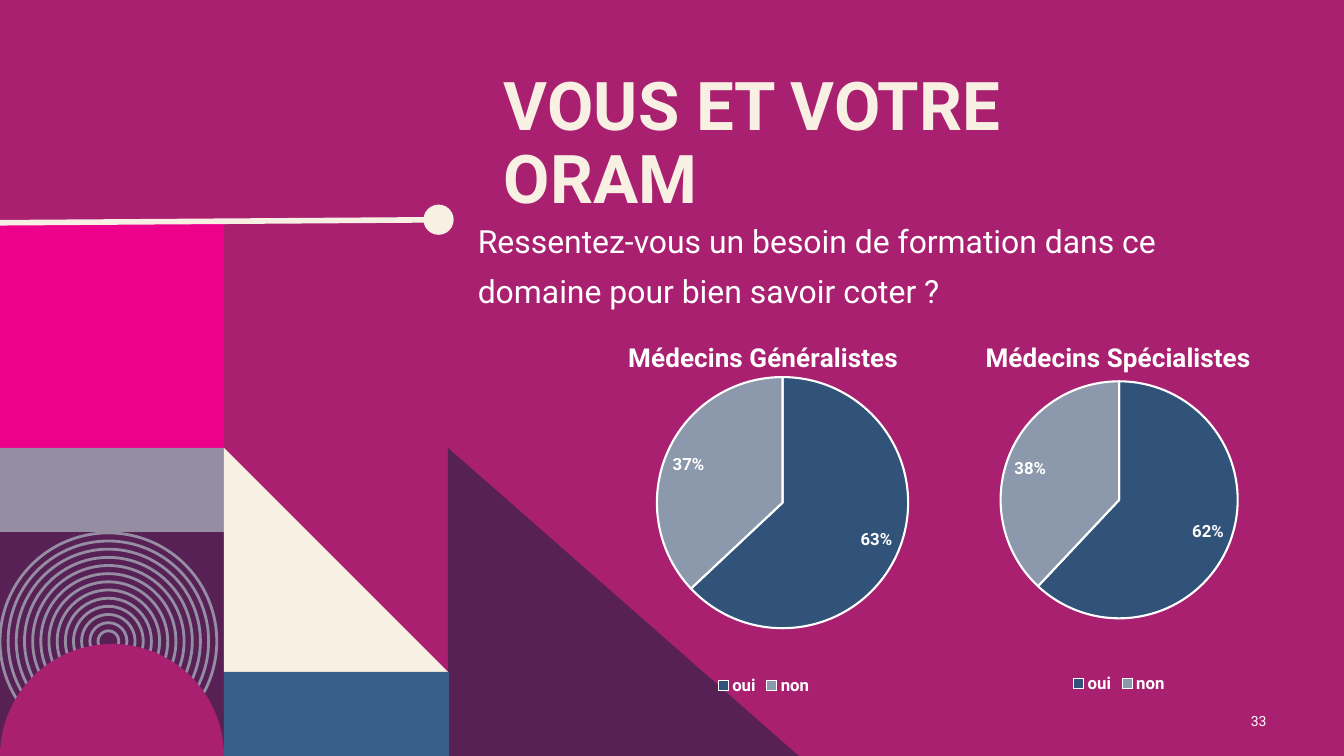
import math

from lxml import etree
from pptx import Presentation
from pptx import util as u
from pptx.chart.data import CategoryChartData
from pptx.dml.color import RGBColor
from pptx.enum import chart as ch, shapes, text
from pptx.oxml import parse_xml
from pptx.oxml.ns import nsdecls, qn

W, H = 13.33, 7.5
FONT = "Roboto"
MAGENTA, PLUM, PINK, GREY = "AA2070", "582156", "EC008C", "958EA2"
CREAM, BLUE, WHITE = "F8F0E3", "385E88", "FFFFFF"
SLICES = "325379", "8C99AD"
SHAPE = shapes.MSO_SHAPE


def color(value):
    return RGBColor.from_string(value)


def paint(sp, fill=None, line=None, width=2):
    sp.shadow.inherit = False
    if fill:
        sp.fill.solid()
        sp.fill.fore_color.rgb = color(fill)
    else:
        sp.fill.background()
    if line:
        sp.line.color.rgb = color(line)
        sp.line.width = u.Pt(width)
    else:
        sp.line.fill.background()
    return sp


def add_preset(s, kind, box, **style):
    return paint(s.shapes.add_shape(kind, *map(u.Inches, box)), **style)


def add_outline(s, points, fill):
    start, *rest = [(u.Inches(x), u.Inches(y)) for x, y in points]
    builder = s.shapes.build_freeform(*start)
    builder.add_line_segments(rest)
    return paint(builder.convert_to_shape(), fill)


def add_triangle(s, box, fill):
    x, y, w, h = box
    add_outline(s, [(x, y), (x + w, y + h), (x, y + h)], fill)


def add_arch(s, box, fill, steps=90):
    x, y, w, h = box
    angles = [math.pi * i / steps for i in range(steps + 1)]
    add_outline(s, [(x + w / 2 * (1 - math.cos(a)), y + h * (1 - math.sin(a)))
                    for a in angles], fill)


def add_rings(s, box, count=13, step=0.081):
    x, y, size, _ = box
    for i in range(count):
        d = size - 2 * i * step
        add_preset(s, SHAPE.OVAL, (x + i * step, y + i * step, d, d), line=GREY)


def add_mosaic(s, box):
    x, y, w, h = box
    tile = w / 2
    low, band = y + tile, 0.375 * tile
    add_preset(s, SHAPE.RECTANGLE, (x, y + h - tile, tile, tile), fill=PLUM)
    add_preset(s, SHAPE.RECTANGLE, (x, y, tile, tile), fill=PINK)
    add_preset(s, SHAPE.RECTANGLE, (x, low, tile, band), fill=GREY)
    add_triangle(s, (x + w, low, 3.48, y + h - low), PLUM)
    add_triangle(s, (x + tile, low, tile, tile), CREAM)
    add_rings(s, (x, low + band + 0.01, 2.15, 2.15))
    add_arch(s, (x, y + h - tile / 2, tile, tile / 2), MAGENTA)
    base = (x + tile, low + tile, tile + 0.01, y + h - low - tile)
    add_preset(s, SHAPE.RECTANGLE, base, fill=BLUE)


def add_pointer(s, box):
    x, y, w, h = box
    add_preset(s, SHAPE.OVAL, (x + w - h, y, h, h), fill=CREAM)
    ends = (x, y + 0.6 * h, x + w - h / 3, y + h / 2)
    line = s.shapes.add_connector(shapes.MSO_CONNECTOR.STRAIGHT, *map(u.Inches, ends))
    line.line.color.rgb = color(CREAM)
    line.line.width = u.Pt(4)
    etree.SubElement(line._element.spPr, qn("a:effectLst"))


def set_font(font, size, value, bold=False):
    font.name = FONT
    font.size = u.Pt(size)
    font.bold = bold
    font.color.rgb = color(value)


def add_text(s, box, words, size, value, bold=False, anchor="TOP", align="LEFT",
             spacing=1.0, after=0):
    tf = s.shapes.add_textbox(*map(u.Inches, box)).text_frame
    tf.word_wrap = True
    tf.vertical_anchor = text.MSO_ANCHOR[anchor]
    p = tf.paragraphs[0]
    p.text = words
    p.alignment = text.PP_ALIGN[align]
    p.line_spacing = spacing
    p.space_after = u.Pt(after)
    set_font(p.font, size, value, bold)


def set_layout(parent, position, index, target=""):
    for old in parent.findall(qn("c:layout")):
        parent.remove(old)
    modes = '<c:xMode val="edge"/><c:yMode val="edge"/>'
    values = "".join(f'<c:{k} val="{v}"/>' for k, v in zip("xywh", position))
    parent.insert(index, parse_xml(
        f'<c:layout {nsdecls("c")}><c:manualLayout>{target}{modes}{values}'
        "</c:manualLayout></c:layout>"))


def add_pie(s, box, title, values, plot, title_at):
    data = CategoryChartData()
    data.categories = ["oui", "non"]
    data.add_series("Series 1", values)
    chart = s.shapes.add_chart(ch.XL_CHART_TYPE.PIE, *map(u.Inches, box), data).chart
    set_font(chart.font, 10, "000000")

    chart.has_title = True
    p = chart.chart_title.text_frame.paragraphs[0]
    p.text = title
    set_font(p.font, 18.6, WHITE, True)

    chart.has_legend = True
    chart.legend.position = ch.XL_LEGEND_POSITION.BOTTOM
    chart.legend.include_in_layout = False
    set_font(chart.legend.font, 12, WHITE, True)

    pie = chart.plots[0]
    pie.vary_by_categories = True
    for i, fill in enumerate(SLICES):
        fmt = pie.series[0].points[i].format
        fmt.fill.solid()
        fmt.fill.fore_color.rgb = color(fill)
        fmt.line.color.rgb = color(WHITE)
        fmt.line.width = u.Pt(1.5)
    pie.has_data_labels = True
    labels = pie.data_labels
    labels.show_percentage = True
    labels.show_value = False
    labels.number_format = "0%"
    labels.number_format_is_linked = False
    labels.position = ch.XL_LABEL_POSITION.INSIDE_END
    set_font(labels.font, 12, WHITE, True)

    root = chart._chartSpace.chart
    set_layout(root.find(qn("c:title")), title_at, 1)
    set_layout(root.plotArea, plot, 0, '<c:layoutTarget val="inner"/>')


def build_slide(prs):
    s = prs.slides.add_slide(prs.slide_layouts[6])
    s.background.fill.solid()
    s.background.fill.fore_color.rgb = color(MAGENTA)
    tile = W / 6
    add_mosaic(s, (0, tile, 2 * tile, H - tile))
    add_pointer(s, (0, 2.03, 4.5, 0.3))
    add_text(s, (4.9, 0.58, 7.05, 1.63), "VOUS ET VOTRE ORAM", 48, CREAM,
             bold=True, anchor="BOTTOM", spacing=0.9)
    add_text(s, (4.64, 2.04, 7.59, 1.35),
             "Ressentez-vous un besoin de formation dans ce domaine pour bien savoir coter ?",
             22.8, WHITE, spacing=1.3, after=12)
    add_text(s, (12.16, 6.95, 0.5, 0.4), "33", 10, WHITE, anchor="MIDDLE", align="RIGHT")
    add_pie(s, (4.9, 3.22, 5.35, 3.72), "Médecins Généralistes", (63, 37),
            (0.3, 0.14, 0.47, 0.67), (0.24, 0.03))
    add_pie(s, (9.14, 3.22, 3.92, 3.7), "Médecins Spécialistes", (62, 38),
            (0.2, 0.15, 0.6, 0.64), (0.15, 0.03))


def main():
    prs = Presentation()
    prs.slide_width, prs.slide_height = u.Inches(W), u.Inches(H)
    build_slide(prs)
    prs.save("out.pptx")


if __name__ == "__main__":
    main()
